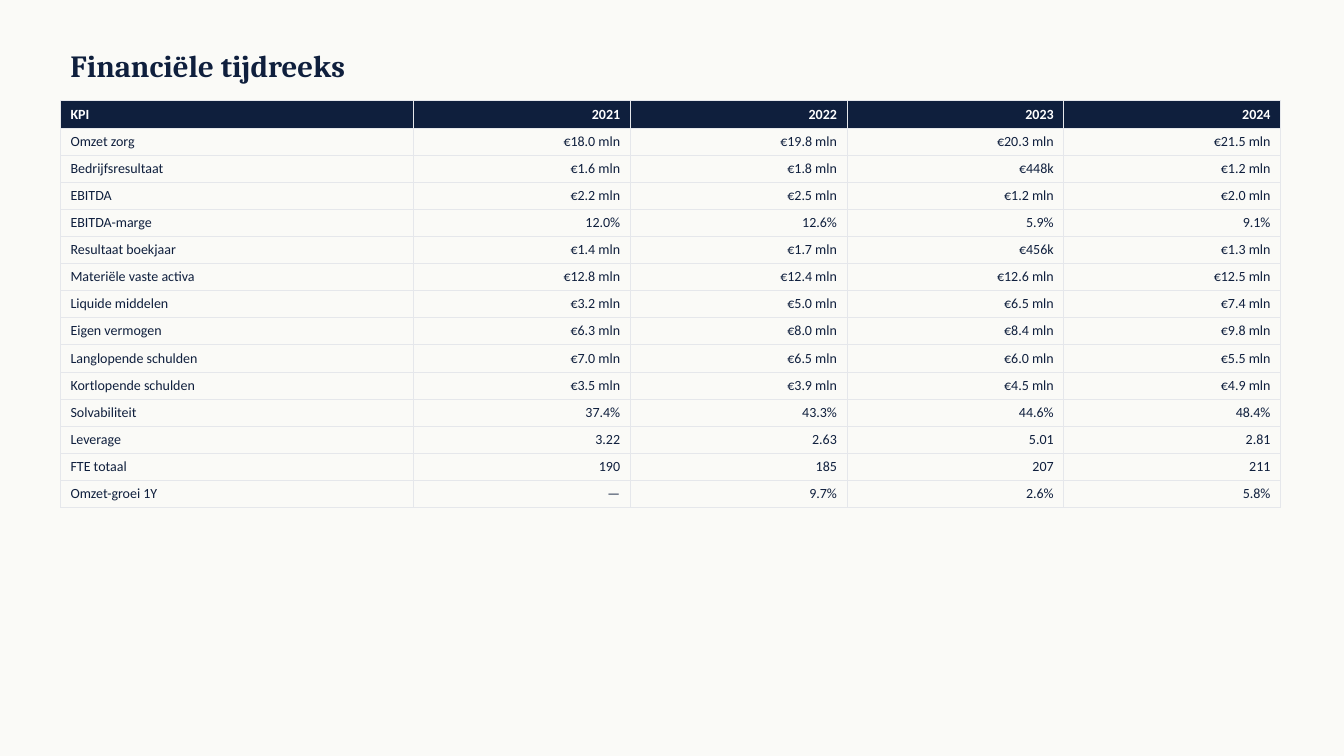
from dataclasses import dataclass

from lxml import etree
from pptx import Presentation, util as u
from pptx.dml.color import RGBColor
from pptx.enum import text
from pptx.oxml.ns import qn


@dataclass(frozen=True)
class Theme:
    paper: str = "FAFAF7"
    ink: str = "0F1F3D"
    white: str = "FFFFFF"
    rule: str = "E5E7EB"
    rule_width: float = 0.5
    heading_font: str = "Cambria"
    body_font: str = "Calibri"
    heading_size: int = 22
    body_size: int = 10


YEARS = ["2021", "2022", "2023", "2024"]
KPIS = [
    ("Omzet zorg", "€18.0 mln", "€19.8 mln", "€20.3 mln", "€21.5 mln"),
    ("Bedrijfsresultaat", "€1.6 mln", "€1.8 mln", "€448k", "€1.2 mln"),
    ("EBITDA", "€2.2 mln", "€2.5 mln", "€1.2 mln", "€2.0 mln"),
    ("EBITDA-marge", "12.0%", "12.6%", "5.9%", "9.1%"),
    ("Resultaat boekjaar", "€1.4 mln", "€1.7 mln", "€456k", "€1.3 mln"),
    ("Materiële vaste activa", "€12.8 mln", "€12.4 mln", "€12.6 mln", "€12.5 mln"),
    ("Liquide middelen", "€3.2 mln", "€5.0 mln", "€6.5 mln", "€7.4 mln"),
    ("Eigen vermogen", "€6.3 mln", "€8.0 mln", "€8.4 mln", "€9.8 mln"),
    ("Langlopende schulden", "€7.0 mln", "€6.5 mln", "€6.0 mln", "€5.5 mln"),
    ("Kortlopende schulden", "€3.5 mln", "€3.9 mln", "€4.5 mln", "€4.9 mln"),
    ("Solvabiliteit", "37.4%", "43.3%", "44.6%", "48.4%"),
    ("Leverage", "3.22", "2.63", "5.01", "2.81"),
    ("FTE totaal", "190", "185", "207", "211"),
    ("Omzet-groei 1Y", "—", "9.7%", "2.6%", "5.8%"),
]


class Deck:
    """Places elements on a grid of 0.1 inch columns and rows."""

    def __init__(self, theme):
        self.theme = theme
        self.prs = Presentation()
        self.prs.slide_width, self.prs.slide_height = u.Inches(13.33), u.Inches(7.5)
        self.s = self.prs.slides.add_slide(self.prs.slide_layouts[6])
        self.fill(self.s.background.fill, theme.paper)

    @staticmethod
    def grid(*units):
        return [u.Inches(n * 0.1) for n in units]

    @staticmethod
    def fill(fill, color):
        fill.solid()
        fill.fore_color.rgb = RGBColor.from_string(color)

    def add_words(self, p, words, color, align=text.PP_ALIGN.LEFT, **font):
        p.alignment = align
        r = p.add_run()
        r.text = words
        for name, value in font.items():
            setattr(r.font, name, value)
        r.font.color.rgb = RGBColor.from_string(color)

    def title(self, words, *box):
        t = self.theme
        tf = self.s.shapes.add_textbox(*self.grid(*box)).text_frame
        tf.word_wrap = True
        tf.vertical_anchor = text.MSO_ANCHOR.MIDDLE
        self.add_words(tf.paragraphs[0], words, t.ink, name=t.heading_font,
                       size=u.Pt(t.heading_size), bold=True)

    def borders(self, cell):
        tc_pr = cell._tc.get_or_add_tcPr()
        for side in ("lnL", "lnR", "lnT", "lnB"):
            ln = etree.SubElement(tc_pr, qn(f"a:{side}"),
                                  w=str(u.Pt(self.theme.rule_width)))
            solid = etree.SubElement(ln, qn("a:solidFill"))
            etree.SubElement(solid, qn("a:srgbClr"), val=self.theme.rule)

    def cell(self, cell, words, header, align):
        t = self.theme
        self.borders(cell)
        if header:
            self.fill(cell.fill, t.ink)
        else:
            cell.fill.background()
        self.add_words(cell.text_frame.paragraphs[0], words,
                       t.white if header else t.ink, align,
                       name=t.body_font, size=u.Pt(t.body_size), bold=header)

    def table(self, rows, left, top, widths, row_height):
        """Draw a table with a filled first row and figures set to the right."""
        box = self.grid(left, top, sum(widths), row_height * len(rows))
        table = self.s.shapes.add_table(len(rows), len(widths), *box).table
        table.first_row = table.horz_banding = False
        for column, width in zip(table.columns, self.grid(*widths)):
            column.width = width
        for i, row in enumerate(rows):
            table.rows[i].height = self.grid(row_height)[0]
            for j, words in enumerate(row):
                align = text.PP_ALIGN.RIGHT if j else text.PP_ALIGN.LEFT
                self.cell(table.cell(i, j), words, i == 0, align)


def main():
    deck = Deck(Theme())
    deck.title("Financiële tijdreeks", 6, 4, 120, 5)
    deck.table([("KPI", *YEARS), *KPIS], left=6, top=10,
               widths=[35] + [21.5] * len(YEARS), row_height=2.69)
    deck.prs.save("out.pptx")


if __name__ == "__main__":
    main()
